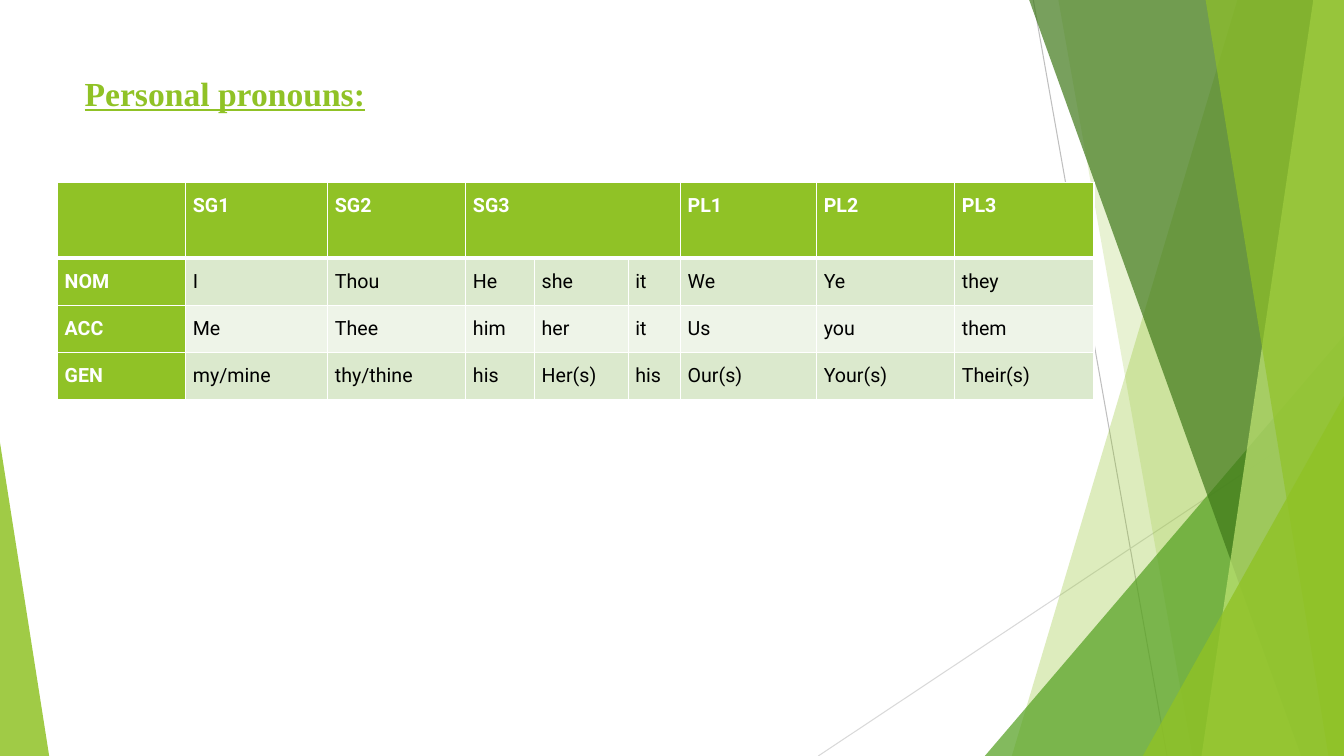
from lxml.etree import SubElement
from pptx import Presentation
from pptx.dml.color import RGBColor
from pptx.enum.shapes import MSO_CONNECTOR as Connector, MSO_SHAPE as Shape
from pptx.enum.text import MSO_ANCHOR as Anchor, PP_ALIGN as Align
from pptx.oxml import parse_xml
from pptx.oxml.ns import nsdecls, qn
from pptx.util import Cm, Pt

GREEN = RGBColor(0x90, 0xC2, 0x26)
LEAF = RGBColor(0x54, 0xA0, 0x21)
FOREST = RGBColor(0x3F, 0x78, 0x19)
LIME = RGBColor(0xC0, 0xE4, 0x74)
BAND_DARK = RGBColor(0xDB, 0xE9, 0xCD)
BAND_LIGHT = RGBColor(0xEE, 0xF4, 0xE8)
GRAY = RGBColor(0xBF, 0xBF, 0xBF)
PALE_GRAY = RGBColor(0xD9, 0xD9, 0xD9)
WHITE = RGBColor(0xFF, 0xFF, 0xFF)
BLACK = RGBColor(0, 0, 0)

WIDTH, HEIGHT, BLEED = 33.87, 19.05, -0.02
TITLE = "Personal pronouns:"
PRONOUNS = [
    ["", "SG1", "SG2", "SG3", "", "", "PL1", "PL2", "PL3"],
    ["NOM", "I", "Thou", "He", "she", "it", "We", "Ye", "they"],
    ["ACC", "Me", "Thee", "him", "her", "it", "Us", "you", "them"],
    ["GEN", "my/mine", "thy/thine", "his", "Her(s)", "his", "Our(s)", "Your(s)", "Their(s)"],
]
COLUMN_WIDTHS = [3.23, 3.58, 3.48, 1.73, 2.36, 1.32, 3.43, 3.48, 3.51]
ROW_HEIGHTS = [1.91, 1.19, 1.19, 1.19]
RAYS = [
    (26.04, 0, 29.41, HEIGHT, GRAY),
    (WIDTH, 10.24, 20.62, HEIGHT, PALE_GRAY),
]
FACETS = [
    ("panel", 31.19, 25.5, GREEN, 30),
    ("panel", 26.67, 30.05, GREEN, 20),
    ("triangle", 24.82, 8.46, WIDTH - 24.82, 1, LEAF, 72),
    ("panel", 25.93, 32.79, FOREST, 70),
    ("panel", 33.1, 30.28, LIME, 70),
    ("panel", 30.38, 33.48, GREEN, 65),
    ("triangle", 28.8, 9.98, WIDTH - 28.8, 1, GREEN, 80),
    ("triangle", 0, 11.15, 1.24, 0, GREEN, 85),
]


def add_ray(page, x1, y1, x2, y2, color):
    ray = page.shapes.add_connector(Connector.STRAIGHT, Cm(x1), Cm(y1), Cm(x2), Cm(y2))
    ray.line.color.rgb = color
    ray.line.width = Pt(0.75)
    SubElement(ray._element.spPr, qn("a:effectLst"))


def add_panel(page, top_x, bottom_x):
    outline = page.shapes.build_freeform(Cm(top_x), Cm(BLEED))
    corners = [(WIDTH, BLEED), (WIDTH, HEIGHT), (bottom_x, HEIGHT)]
    outline.add_line_segments([(Cm(x), Cm(y)) for x, y in corners])
    return outline.convert_to_shape()


def add_triangle(page, left, top, width, apex):
    triangle = page.shapes.add_shape(
        Shape.ISOSCELES_TRIANGLE, Cm(left), Cm(top), Cm(width), Cm(HEIGHT - top))
    triangle.adjustments[0] = apex
    return triangle


def add_facet(page, kind, *details):
    *place, color, opacity = details
    facet = (add_panel if kind == "panel" else add_triangle)(page, *place)
    facet.shadow.inherit = False
    facet.line.fill.background()
    facet.fill.solid()
    facet.fill.fore_color.rgb = color
    tint = facet._element.spPr.find(qn("a:solidFill"))[0]
    SubElement(tint, qn("a:alpha"), val=str(opacity * 1000))


def write(para, text, font, size, color, bold):
    span = para.add_run()
    span.text = text
    span.font.name = font
    span.font.size = Pt(size)
    span.font.color.rgb = color
    span.font.bold = bold
    return span


def add_title(page):
    box = page.shapes.title
    box.left, box.top, box.width, box.height = Cm(1.88), Cm(1.7), Cm(23.88), Cm(3.66)
    box.text_frame.vertical_anchor = Anchor.TOP
    para = box.text_frame.paragraphs[0]
    para.alignment = Align.LEFT
    write(para, TITLE, "Times New Roman", 24, GREEN, True).font.underline = True


def set_borders(cell, is_header):
    properties = cell._tc.get_or_add_tcPr()
    for index, side in enumerate("LRTB"):
        heavy = (side == "B") if is_header else False
        properties.insert(index, parse_xml(
            f'<a:ln{side} {nsdecls("a")} w="{Pt(3 if heavy else 1)}">'
            f'<a:solidFill><a:srgbClr val="{WHITE}"/></a:solidFill></a:ln{side}>'))


def fill_cell(cell, text, row, column):
    is_label = row == 0 or column == 0
    cell.fill.solid()
    cell.fill.fore_color.rgb = GREEN if is_label else BAND_DARK if row % 2 else BAND_LIGHT
    cell.margin_left = cell.margin_right = Cm(0.18)
    cell.margin_top = cell.margin_bottom = 0
    set_borders(cell, row == 0)
    para = cell.text_frame.paragraphs[0]
    para.line_spacing = 1.5
    if text:
        write(para, text, "Roboto", 14, WHITE if is_label else BLACK, is_label)


def add_pronoun_table(page):
    table = page.shapes.add_table(
        len(ROW_HEIGHTS), len(COLUMN_WIDTHS), Cm(1.45), Cm(4.6),
        Cm(sum(COLUMN_WIDTHS)), Cm(sum(ROW_HEIGHTS))).table
    for column, width in zip(table.columns, COLUMN_WIDTHS):
        column.width = Cm(width)
    for row, height in zip(table.rows, ROW_HEIGHTS):
        row.height = Cm(height)
    for row, words in enumerate(PRONOUNS):
        for column, word in enumerate(words):
            fill_cell(table.cell(row, column), word, row, column)
    table.cell(0, 3).merge(table.cell(0, 5))


def main():
    deck = Presentation()
    deck.slide_width, deck.slide_height = Cm(WIDTH), Cm(HEIGHT)
    page = deck.slides.add_slide(deck.slide_layouts[5])
    for ray in RAYS:
        add_ray(page, *ray)
    for facet in FACETS:
        add_facet(page, *facet)
    add_title(page)
    add_pronoun_table(page)
    deck.save("out.pptx")


if __name__ == "__main__":
    main()
